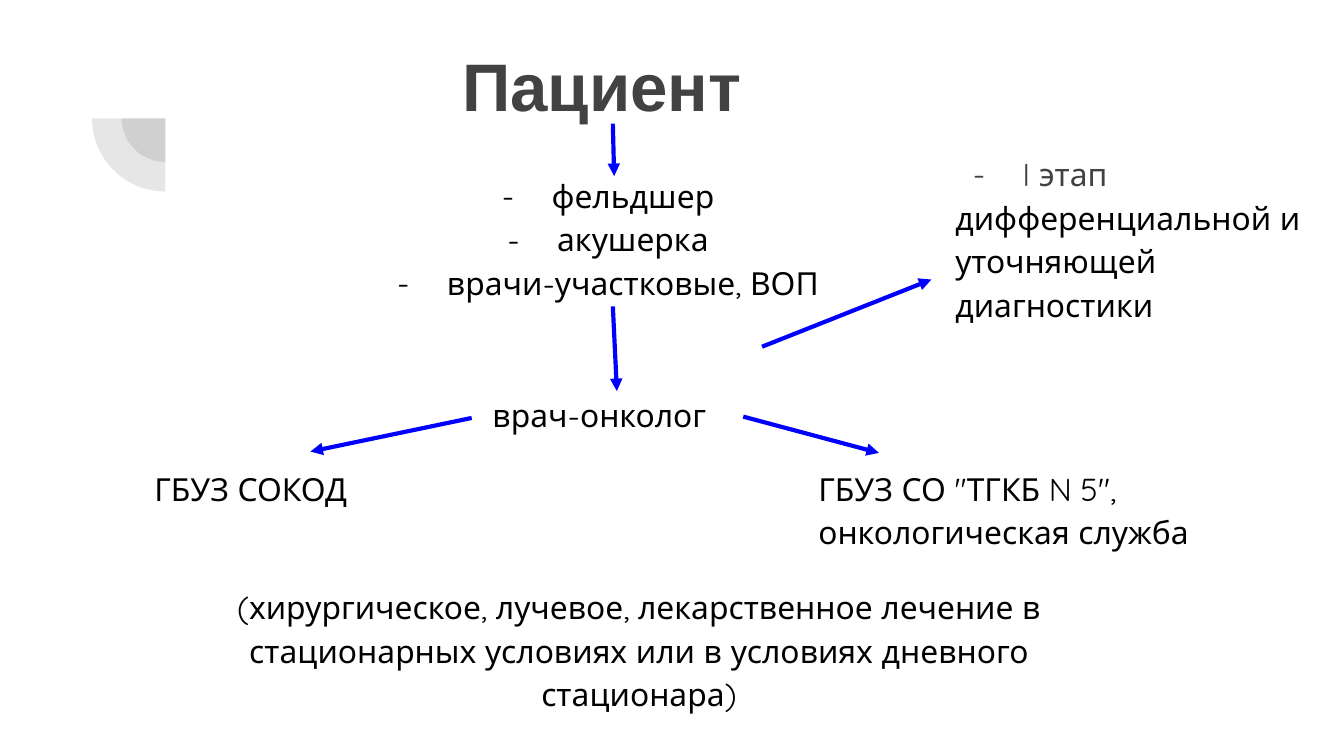
from dataclasses import dataclass

from lxml import etree
from pptx import Presentation
from pptx import util as u
from pptx.dml.color import RGBColor
from pptx.enum import shapes, text
from pptx.oxml.ns import qn

BLACK, GREY, BLUE = "000000", "424242", "0000FF"
LEFT, CENTER = text.PP_ALIGN.LEFT, text.PP_ALIGN.CENTER


@dataclass
class Line:
    words: str
    color: str = BLACK
    bullet: bool = False
    spacing: float = 1.15
    before: float = 0


@dataclass
class Block:
    box: tuple[float, float, float, float]
    lines: list[Line]
    align: text.PP_ALIGN = LEFT
    font: str = "Quicksand"
    size: float = 17
    bold: bool = False


@dataclass
class Arrow:
    start: tuple[float, float]
    end: tuple[float, float]


BLOCKS = [
    Block((3.34, 0.23, 9.49, 0.68), [Line("Пациент", GREY, spacing=1)],
          font="Arial", size=36, bold=True),
    Block((1.05, 3.35, 2.8, 3.36), [Line("ГБУЗ СОКОД")]),
    Block((2.38, 1.17, 4.16, 3.36), [
        Line("фельдшер", bullet=True),
        Line("акушерка", bullet=True),
        Line("врачи-участковые, ВОП", bullet=True),
        Line("врач-онколог", before=47),
    ], CENTER),
    Block((5.99, 3.35, 3.52, 3.36),
          [Line('ГБУЗ СО "ТГКБ N 5",'), Line("онкологическая служба")]),
    Block((1.17, 4.23, 7.17, 0.82), [
        Line("(хирургическое, лучевое, лекарственное лечение в стационарных "
             "условиях или в условиях дневного стационара)"),
    ], CENTER),
    Block((7.01, 1.05, 3.03, 1.43), [
        Line("I этап", GREY, bullet=True, spacing=1),
        Line("дифференциальной и уточняющей диагностики"),
    ]),
]
ARROWS = [
    Arrow((4.56, 0.92), (4.57, 1.31)),
    Arrow((5.67, 2.58), (6.93, 2.08)),
    Arrow((4.56, 2.28), (4.59, 2.91)),
    Arrow((3.51, 3.11), (2.31, 3.36)),
    Arrow((5.53, 3.1), (6.54, 3.37)),
]
ARC_CENTER = (1.23, 0.88)
ARC_DIAMETERS = (0.65, 1.09)


def paint(color_format, value: str) -> None:
    color_format.rgb = RGBColor.from_string(value)


def add_bullet(paragraph, color: str, font: str) -> None:
    props = paragraph._p.get_or_add_pPr()
    props.set("marL", str(u.Inches(0.5)))
    props.set("indent", str(u.Inches(-0.37)))
    bullet_color = etree.SubElement(props, qn("a:buClr"))
    etree.SubElement(bullet_color, qn("a:srgbClr"), val=color)
    etree.SubElement(props, qn("a:buFont"), typeface=font)
    etree.SubElement(props, qn("a:buChar"), char="-")


def add_block(slide, block: Block) -> None:
    frame = slide.shapes.add_textbox(*map(u.Inches, block.box)).text_frame
    frame.word_wrap = True
    frame.margin_left = frame.margin_right = u.Inches(0.1)
    frame.margin_top = frame.margin_bottom = u.Inches(0.1)
    for index, line in enumerate(block.lines):
        paragraph = frame.add_paragraph() if index else frame.paragraphs[0]
        paragraph.alignment = block.align
        paragraph.line_spacing = line.spacing
        paragraph.space_before = u.Pt(line.before)
        if line.bullet:
            add_bullet(paragraph, line.color, block.font)
        run = paragraph.add_run()
        run.text = line.words
        run.font.name, run.font.size = block.font, u.Pt(block.size)
        run.font.bold = block.bold
        paint(run.font.color, line.color)


def add_arrow(slide, arrow: Arrow) -> None:
    connector = slide.shapes.add_connector(
        shapes.MSO_CONNECTOR.STRAIGHT, *map(u.Inches, arrow.start + arrow.end))
    connector.line.width = u.Pt(2.25)
    paint(connector.line.color, BLUE)
    etree.SubElement(connector.line._get_or_add_ln(), qn("a:tailEnd"), type="triangle")
    etree.SubElement(connector._element.spPr, qn("a:effectLst"))


def add_arc(slide, diameter: float) -> None:
    left, top = (middle - diameter / 2 for middle in ARC_CENTER)
    pie = slide.shapes.add_shape(
        shapes.MSO_SHAPE.PIE, *map(u.Inches, (left, top, diameter, diameter)))
    pie.adjustments[0], pie.adjustments[1] = 108, 162
    pie.rotation = 270
    pie.shadow.inherit = False
    pie.line.fill.background()
    pie.fill.solid()
    paint(pie.fill.fore_color, GREY)
    for color in pie._element.spPr.iter(qn("a:srgbClr")):
        etree.SubElement(color, qn("a:alpha"), val="13000")


def main() -> None:
    """Build the patient referral slide."""
    deck = Presentation()
    deck.slide_width = u.Inches(10)
    deck.slide_height = deck.slide_width * 9 // 16
    slide = deck.slides.add_slide(deck.slide_layouts[6])
    for diameter in ARC_DIAMETERS:
        add_arc(slide, diameter)
    for block in BLOCKS:
        add_block(slide, block)
    for arrow in ARROWS:
        add_arrow(slide, arrow)
    deck.save("out.pptx")


if __name__ == "__main__":
    main()
